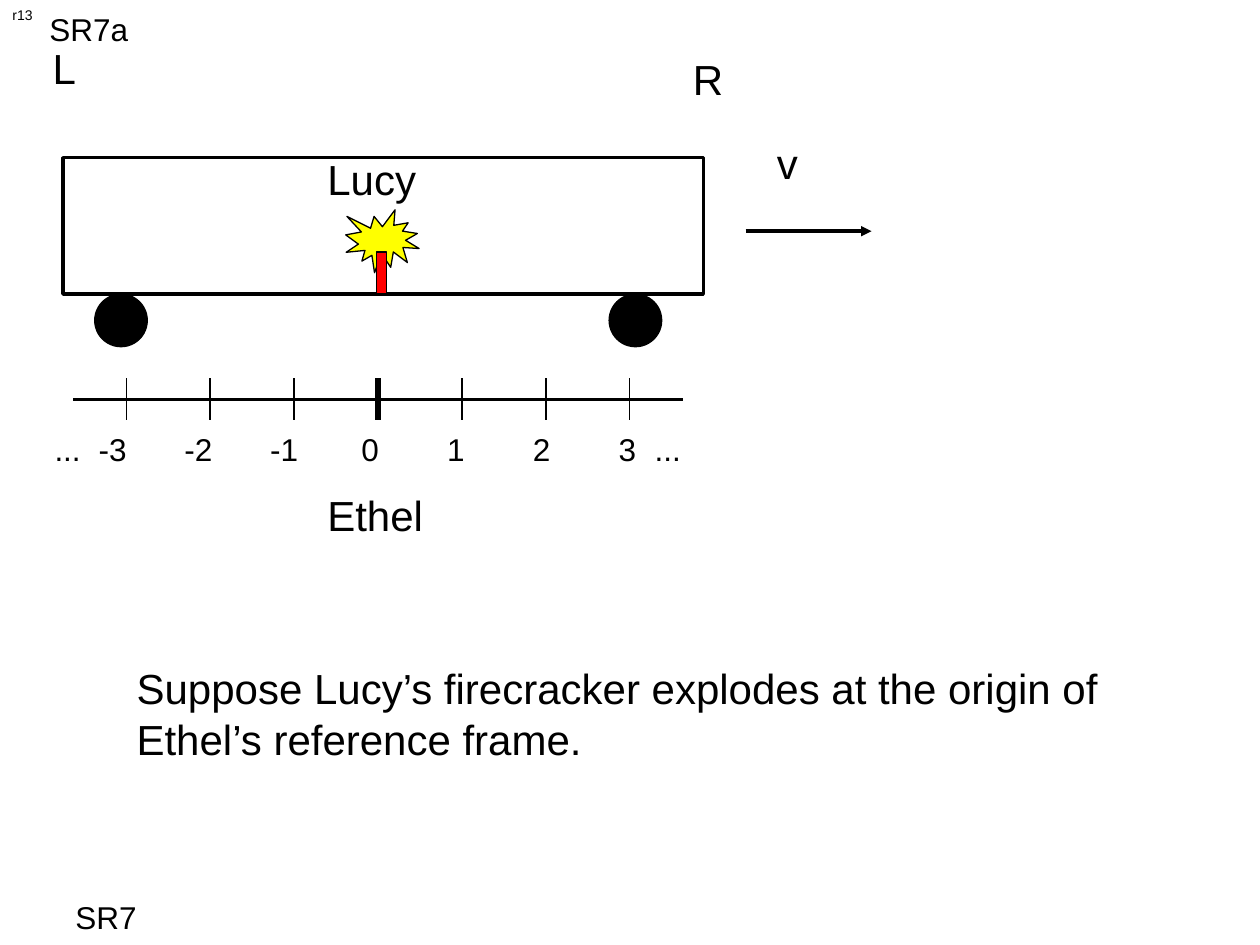
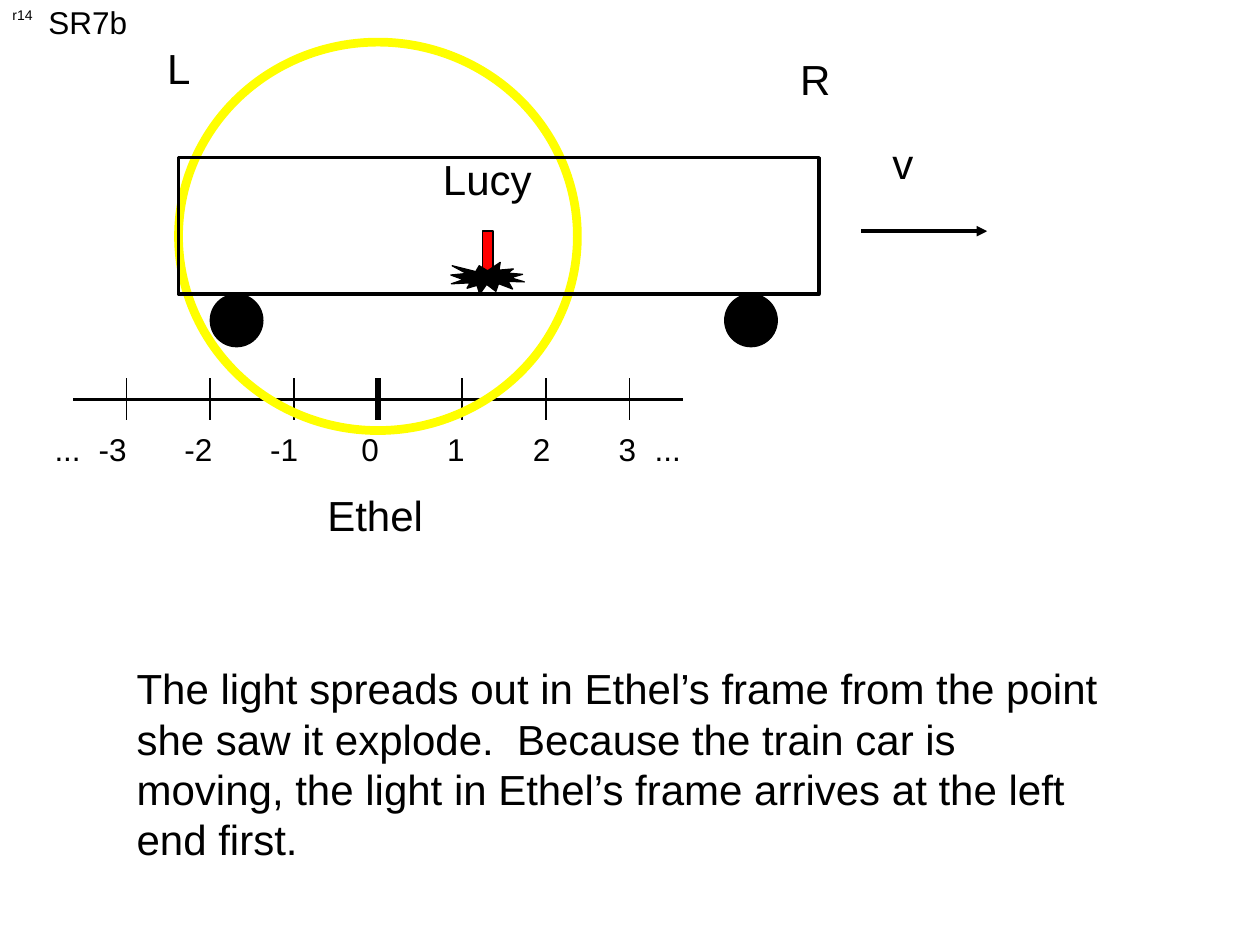
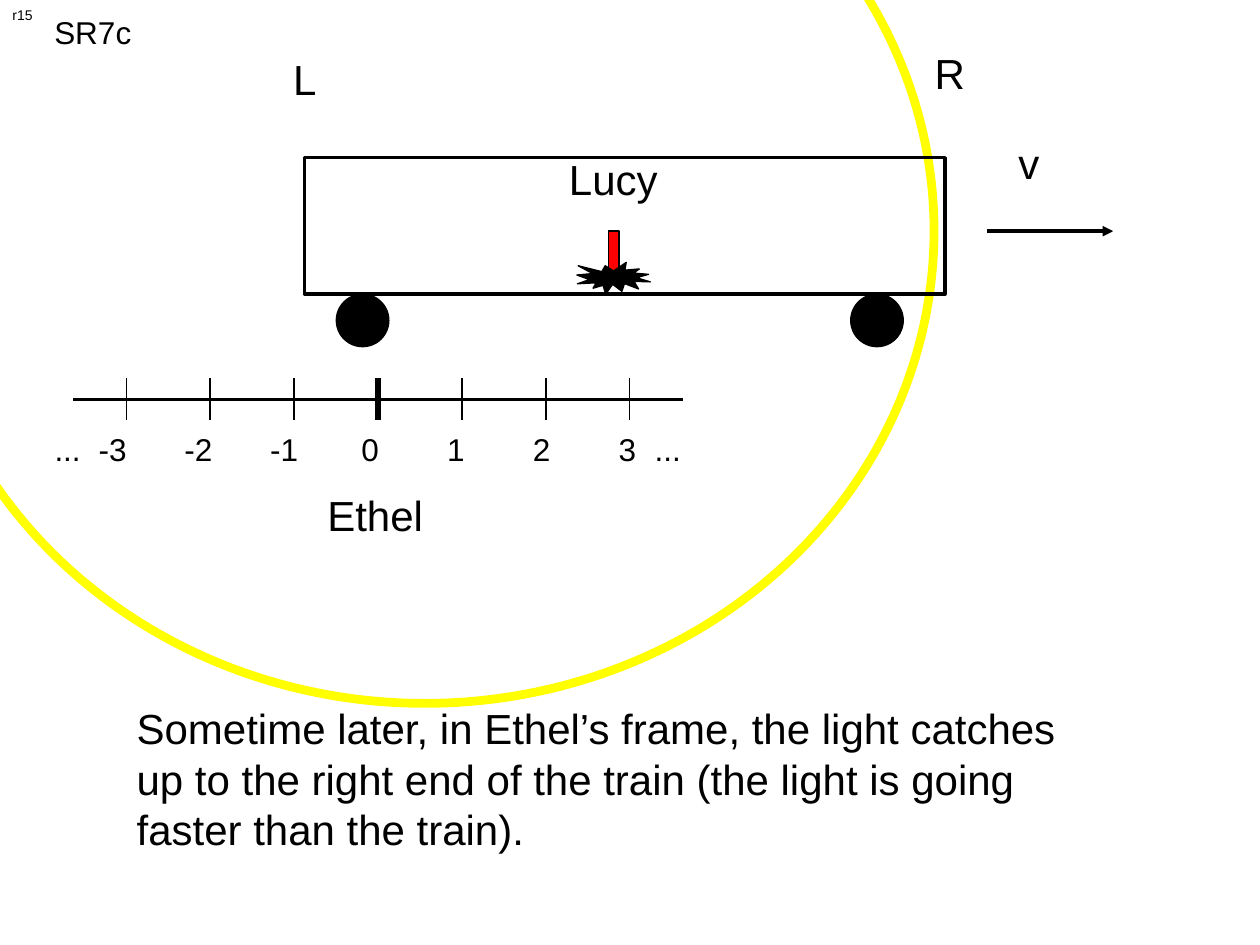
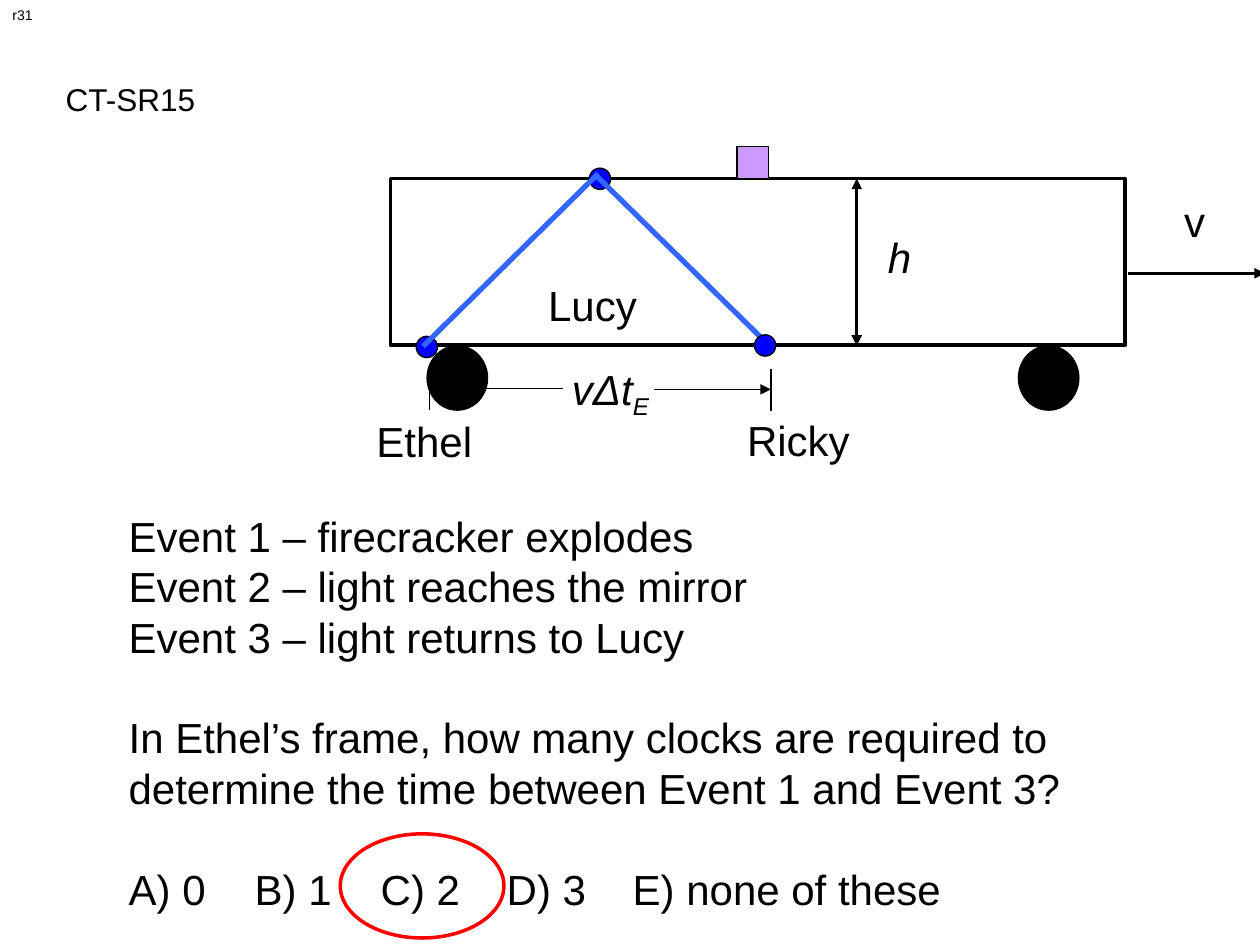
from dataclasses import dataclass

from lxml import etree
from pptx import Presentation
from pptx.dml.color import RGBColor
from pptx.enum import shapes, text
from pptx.oxml.ns import qn
from pptx.util import Cm, Pt


@dataclass(frozen=True)
class Theme:
    font: str = "Arial"
    ink: str = "000000"
    light: str = "FFFF00"
    cracker: str = "FF0000"
    clock: str = "0000FF"
    ray: str = "3366FF"
    mirror: str = "CC99FF"
    tag_size: int = 8
    small_size: int = 18
    text_size: int = 24
    line_gap: float = 28.8
    hair: float = 0.75
    thin: float = 1
    medium: float = 2
    thick: float = 3
    flash: float = 5


theme = Theme()
RECT = shapes.MSO_SHAPE.RECTANGLE
OVAL = shapes.MSO_SHAPE.OVAL
BURST = shapes.MSO_SHAPE.EXPLOSION1
STRAIGHT = shapes.MSO_CONNECTOR.STRAIGHT


def write(box, words, size=theme.text_size, wrap=False):
    """Put plain, left-aligned words into a text box or placeholder."""
    frame = box.text_frame
    frame.text = words
    frame.word_wrap = wrap
    frame.auto_size = text.MSO_AUTO_SIZE.NONE
    frame.vertical_anchor = text.MSO_ANCHOR.TOP
    for paragraph in frame.paragraphs:
        paragraph.alignment = text.PP_ALIGN.LEFT
        paragraph.space_before = Pt(0)
        for run in paragraph.runs:
            run.font.name = theme.font
            run.font.size = Pt(size)
            run.font.color.rgb = RGBColor.from_string(theme.ink)
    return box


def paint(item, weight=theme.hair, colour=theme.ink, fill=None, arrows=()):
    """Style a shape or connector; arrows holds "headEnd" and/or "tailEnd"."""
    item.line.color.rgb = RGBColor.from_string(colour)
    item.line.width = Pt(weight)
    outline = item.element.spPr.find(qn("a:ln"))
    for end in arrows:
        etree.SubElement(outline, qn(f"a:{end}"), type="triangle")
    if not hasattr(item, "fill"):
        etree.SubElement(item.element.spPr, qn("a:effectLst"))
        return
    item.shadow.inherit = False
    if fill:
        item.fill.solid()
        item.fill.fore_color.rgb = RGBColor.from_string(fill)
    else:
        item.fill.background()


deck = Presentation()
deck.slide_width, deck.slide_height = Cm(25.4), Cm(19.05)

# Headings, page tags and body text of all slides
pages = [
    ("r13", "SR7a", (0.74, 0.08), (2.5, 13.23, 20.14, 2.29),
     "Suppose Lucy’s firecracker explodes at the origin of Ethel’s reference frame."),
    ("r14", "SR7b", (0.72, -0.07), (2.5, 13.23, 20.14, 4.31),
     "The light spreads out in Ethel’s frame from the point she saw it explode.  "
     "Because the train car is moving, the light in Ethel’s frame arrives at the left end first."),
    ("r15", "SR7c", (0.84, 0.13), (2.5, 14.04, 20.14, 3.3),
     "Sometime later, in Ethel’s frame, the light catches up to the right end of the train "
     "(the light is going faster than the train)."),
    ("r31", "CT-SR15", (1.07, 1.48), (2.34, 10.16, 21.21, 8.38),
     "Event 1 – firecracker explodes\n"
     "Event 2 – light reaches the mirror\n"
     "Event 3 – light returns to Lucy\n"
     "In Ethel’s frame, how many clocks are required to determine the time "
     "between Event 1 and Event 3?\n"
     "A) 0\tB) 1\tC) 2\tD) 3\tE) none of these"),
]
for tag, heading, corner, body_place, words in pages:
    slide = deck.slides.add_slide(deck.slide_layouts[1])
    title, body = slide.placeholders
    for holder, place in ((title, (*corner, 3.2, 1.02)), (body, body_place)):
        holder.left, holder.top, holder.width, holder.height = map(Cm, place)
    write(title, heading, theme.small_size, wrap=True)
    write(body, words, wrap=True)
    for paragraph in body.text_frame.paragraphs:
        properties = paragraph._p.get_or_add_pPr()
        properties.set("marL", "0")
        properties.set("indent", "0")
        etree.SubElement(properties, qn("a:buNone"))
    write(slide.shapes.add_textbox(0, 0, Cm(0.91), Cm(0.6)), tag, theme.tag_size)

# Slides 1 to 3: the car moves along Ethel's scale
# Each scene: car left, L corner, R corner, light circle
scenes = [
    (1.27, (0.81, 0.74), (13.72, 0.95), None),
    (3.6, (3.12, 0.74), (15.88, 0.95), (3.6, 0.85, 8.04, 7.83)),
    (6.14, (5.66, 0.95), (18.59, 0.83), (-1.7, -4.87, 20.53, 19.05)),
]
for slide, (car_left, left_end, right_end, light) in zip(deck.slides, scenes):
    scale = slide.shapes.add_group_shape().shapes
    paint(scale.add_connector(STRAIGHT, Cm(1.48), Cm(8.05), Cm(13.76), Cm(8.05)), theme.medium)
    for mark in range(-3, 4):
        x = Cm(7.62 + 1.69 * mark)
        paint(scale.add_connector(STRAIGHT, x, Cm(7.62), x, Cm(8.47)),
              theme.thin if mark else theme.thick)
    numbers = write(scale.add_textbox(Cm(0.85), Cm(8.55), Cm(13.5), Cm(1.02)),
                    "...\t-3\t-2\t-1\t0\t1\t2\t3\t...", theme.small_size, wrap=True)
    stops = etree.SubElement(numbers.text_frame.paragraphs[0]._p.get_or_add_pPr(), qn("a:tabLst"))
    for stop in [1.17 + 1.73 * step for step in range(7)] + [12.36]:
        etree.SubElement(stops, qn("a:tab"), pos=str(Cm(stop)), algn="ctr")

    if light:
        paint(slide.shapes.add_shape(OVAL, *map(Cm, light)), theme.flash, theme.light)

    car = slide.shapes.add_group_shape().shapes
    for wheel in (0.64, 11.01):
        paint(car.add_shape(OVAL, Cm(car_left + wheel), Cm(5.93), Cm(1.06), Cm(1.06)),
              fill=theme.ink)
    paint(car.add_shape(RECT, Cm(car_left), Cm(3.18), Cm(12.91), Cm(2.75)), theme.medium)
    paint(car.add_connector(STRAIGHT, Cm(car_left + 13.76), Cm(4.66),
                            Cm(car_left + 16.3), Cm(4.66)), theme.medium, arrows=["tailEnd"])
    if light:
        firecracker = [(RECT, theme.cracker, 6.13, 4.66, 0.21, 1.06),
                       (BURST, theme.ink, 5.49, 5.29, 1.48, 0.64)]
    else:
        firecracker = [(BURST, theme.light, 5.7, 4.23, 1.48, 1.27),
                       (RECT, theme.cracker, 6.32, 5.08, 0.21, 0.85)]
    for kind, fill, offset, *rest in firecracker:
        paint(car.add_shape(kind, Cm(car_left + offset), *map(Cm, rest)), fill=fill)

    for words, left, top, width in [
        ("v", car_left + 14.14, 2.65, 0.93),
        ("Lucy", car_left + 5.08, 2.96, 2.31),
        ("Ethel", 6.35, 9.74, 2.45),
        ("L", *left_end, 0.98),
        ("R", *right_end, 1.1),
    ]:
        write(slide.shapes.add_textbox(Cm(left), Cm(top), Cm(width), Cm(1.27)), words)

write(deck.slides[0].shapes.add_textbox(Cm(1.27), Cm(17.98), Cm(1.75), Cm(1.02)),
      "SR7", theme.small_size)

# Slide 4: the light clock question
question = deck.slides[3]
car = question.shapes.add_group_shape().shapes
for wheel_left in (8.61, 20.53):
    paint(car.add_shape(OVAL, Cm(wheel_left), Cm(6.97), Cm(1.22), Cm(1.3)), fill=theme.ink)
paint(car.add_shape(RECT, Cm(7.87), Cm(3.6), Cm(14.81), Cm(3.36)), theme.medium)
paint(question.shapes.add_shape(RECT, Cm(14.86), Cm(2.96), Cm(0.64), Cm(0.64)),
      fill=theme.mirror)

for left, top in ((8.39, 6.78), (11.88, 3.39)):
    paint(question.shapes.add_shape(OVAL, Cm(left), Cm(top), Cm(0.43), Cm(0.43)),
          fill=theme.clock)
for ends, weight, colour, arrows in [
    ((17.27, 6.97, 17.27, 3.6), theme.medium, theme.ink, ["headEnd", "tailEnd"]),
    ((22.73, 5.51, 25.5, 5.51), theme.medium, theme.ink, ["tailEnd"]),
    ((8.66, 7.42, 8.66, 8.26), theme.hair, theme.ink, []),
    ((11.35, 7.83, 8.66, 7.83), theme.hair, theme.ink, ["tailEnd"]),
    ((8.53, 6.98, 12.06, 3.5), theme.thick, theme.ray, []),
    ((15.54, 7.0, 12.01, 3.53), theme.thick, theme.ray, []),
    ((15.54, 7.44, 15.54, 8.28), theme.hair, theme.ink, []),
    ((13.18, 7.85, 15.54, 7.85), theme.hair, theme.ink, ["tailEnd"]),
]:
    paint(question.shapes.add_connector(STRAIGHT, *map(Cm, ends)), weight, colour, arrows=arrows)
paint(question.shapes.add_shape(OVAL, Cm(15.21), Cm(6.75), Cm(0.43), Cm(0.43)),
      fill=theme.clock)

for words, left, top, width in [
    ("Lucy", 10.8, 5.51, 2.31),
    ("v", 23.62, 3.81, 0.93),
    ("Ethel", 7.34, 8.26, 2.45),
    ("Ricky", 14.81, 8.23, 2.59),
]:
    write(question.shapes.add_textbox(Cm(left), Cm(top), Cm(width), Cm(1.27)), words)

height = write(question.shapes.add_textbox(Cm(17.65), Cm(4.55), Cm(0.98), Cm(1.27)), "h")
distance = write(question.shapes.add_textbox(Cm(11.28), Cm(7.2), Cm(2.29), Cm(1.3)), "vΔt")
subscript = distance.text_frame.paragraphs[0].add_run()
subscript.text = "E"
subscript.font.name = theme.font
subscript.font.size = Pt(theme.text_size)
subscript.font.color.rgb = RGBColor.from_string(theme.ink)
subscript._r.get_or_add_rPr().set("baseline", "-25000")
for symbol in (height, distance):
    for run in symbol.text_frame.paragraphs[0].runs:
        run.font.italic = True

*events, prompt, answers = question.placeholders[1].text_frame.paragraphs
for paragraph in (prompt, answers):
    paragraph.space_before = Pt(theme.line_gap)
stops = etree.SubElement(answers._p.get_or_add_pPr(), qn("a:tabLst"))
for column in range(1, 5):
    etree.SubElement(stops, qn("a:tab"), pos=str(Cm(2.5 * column)), algn="l")
paint(question.shapes.add_shape(OVAL, Cm(6.86), Cm(16.81), Cm(3.3), Cm(2.1)),
      theme.medium, theme.cracker)

deck.save("out.pptx")
